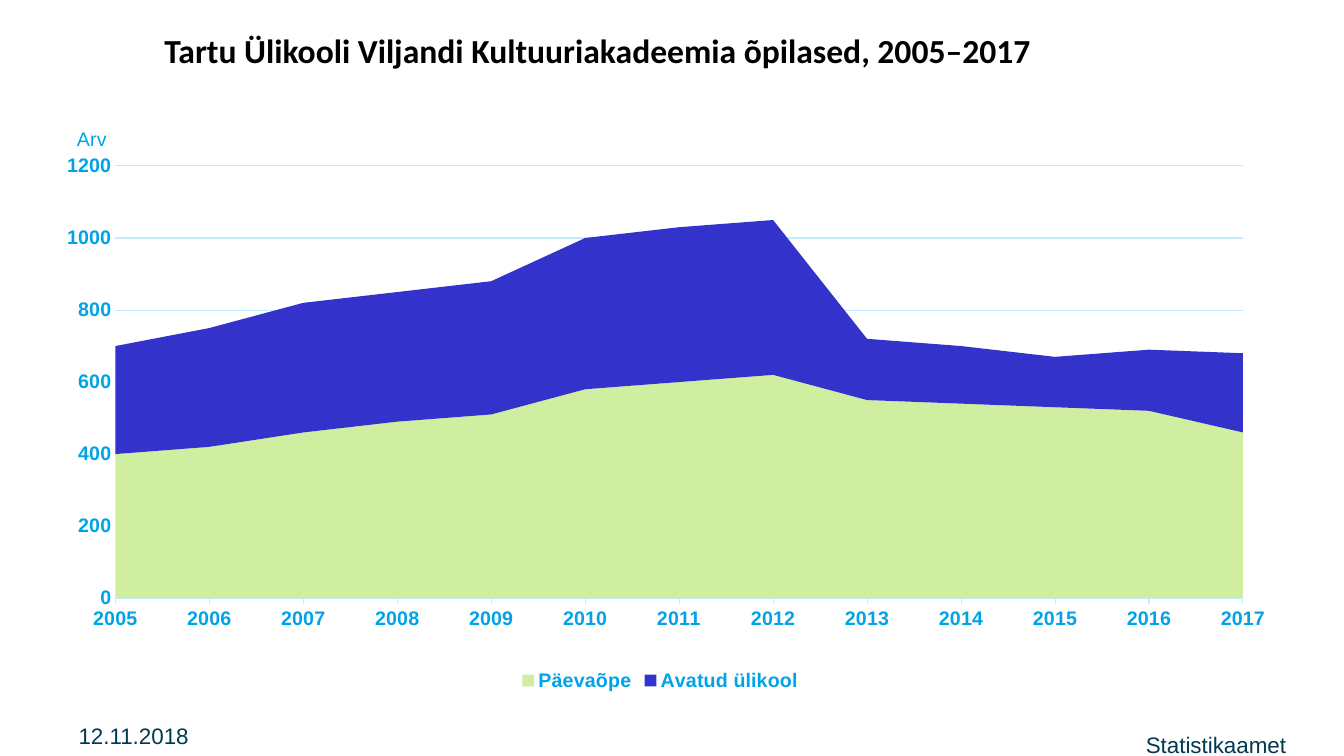
"""Build the area chart slide on the students of Viljandi Culture Academy."""
from dataclasses import dataclass

import lxml.etree
import pptx
import pptx.chart.data
import pptx.dml.color
import pptx.enum.chart
import pptx.enum.text
import pptx.oxml
import pptx.oxml.ns
import pptx.util

Pt = pptx.util.Pt
ALIGN = pptx.enum.text.PP_ALIGN
ANCHOR = pptx.enum.text.MSO_ANCHOR
NAVY, SKY, PALE = "003951", "00A3E7", "BFECFF"
CHART_WIDTH, CHART_HEIGHT = 878.4, 421.2


@dataclass(frozen=True)
class Label:
    text: str
    left: float
    top: float
    width: float
    height: float
    size: float = 16
    font: str = "Arial"
    color: str = NAVY
    bold: bool = False
    align: ALIGN = ALIGN.LEFT
    anchor: ANCHOR = ANCHOR.MIDDLE
    side_inset: float = 0


@dataclass(frozen=True)
class Series:
    name: str
    values: tuple[int, ...]
    color: str


LABELS = [
    Label("Tartu Ülikooli Viljandi Kultuuriakadeemia õpilased, 2005–2017",
          117.4, 11.5, 740.9, 48.2, size=24, font="Calibri", color="000000", bold=True),
    Label("Statistikaamet", 614.9, 522, 303.8, 18, align=ALIGN.RIGHT, anchor=ANCHOR.TOP),
    Label("12.11.2018", 49, 511.2, 223.9, 28.8, side_inset=7.2),
]
YEARS = [str(year) for year in range(2005, 2018)]
SERIES = [
    Series("Päevaõpe",
           (400, 420, 460, 490, 510, 580, 600, 620, 550, 540, 530, 520, 460), "CFEEA0"),
    Series("Avatud ülikool",
           (300, 330, 360, 360, 370, 420, 430, 430, 170, 160, 140, 170, 220), "3333CC"),
]


def rgb(value: str) -> pptx.dml.color.RGBColor:
    return pptx.dml.color.RGBColor.from_string(value)


def style_font(font, size: float, color: str, bold: bool, name: str = "Arial") -> None:
    font.name, font.size, font.bold = name, Pt(size), bold
    font.color.rgb = rgb(color)


def style_line(line, color: str) -> None:
    line.color.rgb = rgb(color)
    line.width = Pt(0.75)


def add_label(slide, label: Label) -> None:
    box = slide.shapes.add_textbox(
        Pt(label.left), Pt(label.top), Pt(label.width), Pt(label.height))
    frame = box.text_frame
    frame.word_wrap = True
    frame.vertical_anchor = label.anchor
    frame.margin_top = frame.margin_bottom = 0
    frame.margin_left = frame.margin_right = Pt(label.side_inset)
    paragraph = frame.paragraphs[0]
    paragraph.alignment = label.align
    run = paragraph.add_run()
    run.text = label.text
    style_font(run.font, label.size, label.color, label.bold, label.font)


def set_layout(parent, index: int, **settings) -> None:
    tag = pptx.oxml.ns.qn("c:layout")
    for old in parent.findall(tag):
        parent.remove(old)
    layout = pptx.oxml.parse_xml(f"<c:layout {pptx.oxml.ns.nsdecls('c')}/>")
    manual = lxml.etree.SubElement(layout, pptx.oxml.ns.qn("c:manualLayout"))
    for name, value in settings.items():
        lxml.etree.SubElement(manual, pptx.oxml.ns.qn(f"c:{name}")).set("val", str(value))
    parent.insert(index, layout)


def add_student_chart(slide) -> None:
    data = pptx.chart.data.CategoryChartData(number_format="0")
    data.categories = YEARS
    for series in SERIES:
        data.add_series(series.name, series.values)
    chart = slide.shapes.add_chart(
        pptx.enum.chart.XL_CHART_TYPE.AREA_STACKED,
        Pt(32.4), Pt(75.6), Pt(CHART_WIDTH), Pt(CHART_HEIGHT), data).chart
    style_font(chart.font, 10, NAVY, False)
    chart.plots[0].vary_by_categories = False
    for drawn, series in zip(chart.plots[0].series, SERIES):
        drawn.format.fill.solid()
        drawn.format.fill.fore_color.rgb = rgb(series.color)
        drawn.format.line.fill.background()

    ticks = pptx.enum.chart.XL_TICK_MARK
    years, counts = chart.category_axis, chart.value_axis
    for axis in (years, counts):
        style_font(axis.tick_labels.font, 14, SKY, True)
        axis.minor_tick_mark = ticks.NONE
    years.major_tick_mark = ticks.OUTSIDE
    years.has_major_gridlines = False
    style_line(years.format.line, PALE)
    counts.major_tick_mark = ticks.NONE
    counts.minimum_scale, counts.maximum_scale, counts.major_unit = 0, 1200, 200
    counts.format.line.fill.background()
    counts.has_major_gridlines = True
    style_line(counts.major_gridlines.format.line, PALE)

    chart.has_legend = True
    chart.legend.position = pptx.enum.chart.XL_LEGEND_POSITION.BOTTOM
    chart.legend.include_in_layout = False
    style_font(chart.legend.font, 14, SKY, True)

    chart.has_title = True
    run = chart.chart_title.text_frame.paragraphs[0].add_run()
    run.text = "Arv"
    style_font(run.font, 14, SKY, False)
    chart_space = chart.element
    for crossing in chart_space.iter(pptx.oxml.ns.qn("c:crossBetween")):
        crossing.set("val", "midCat")
    set_layout(next(chart_space.iter(pptx.oxml.ns.qn("c:title"))), 1,
               xMode="edge", yMode="edge", x=20 / CHART_WIDTH, y=12 / CHART_HEIGHT)
    set_layout(next(chart_space.iter(pptx.oxml.ns.qn("c:plotArea"))), 0,
               layoutTarget="inner", xMode="edge", yMode="edge",
               x=50 / CHART_WIDTH, y=43 / CHART_HEIGHT,
               w=805.5 / CHART_WIDTH, h=308.7 / CHART_HEIGHT)


def main() -> None:
    presentation = pptx.Presentation()
    presentation.slide_width, presentation.slide_height = Pt(960), Pt(540)
    slide = presentation.slides.add_slide(presentation.slide_layouts[6])
    for label in LABELS:
        add_label(slide, label)
    add_student_chart(slide)
    presentation.save("out.pptx")


if __name__ == "__main__":
    main()
